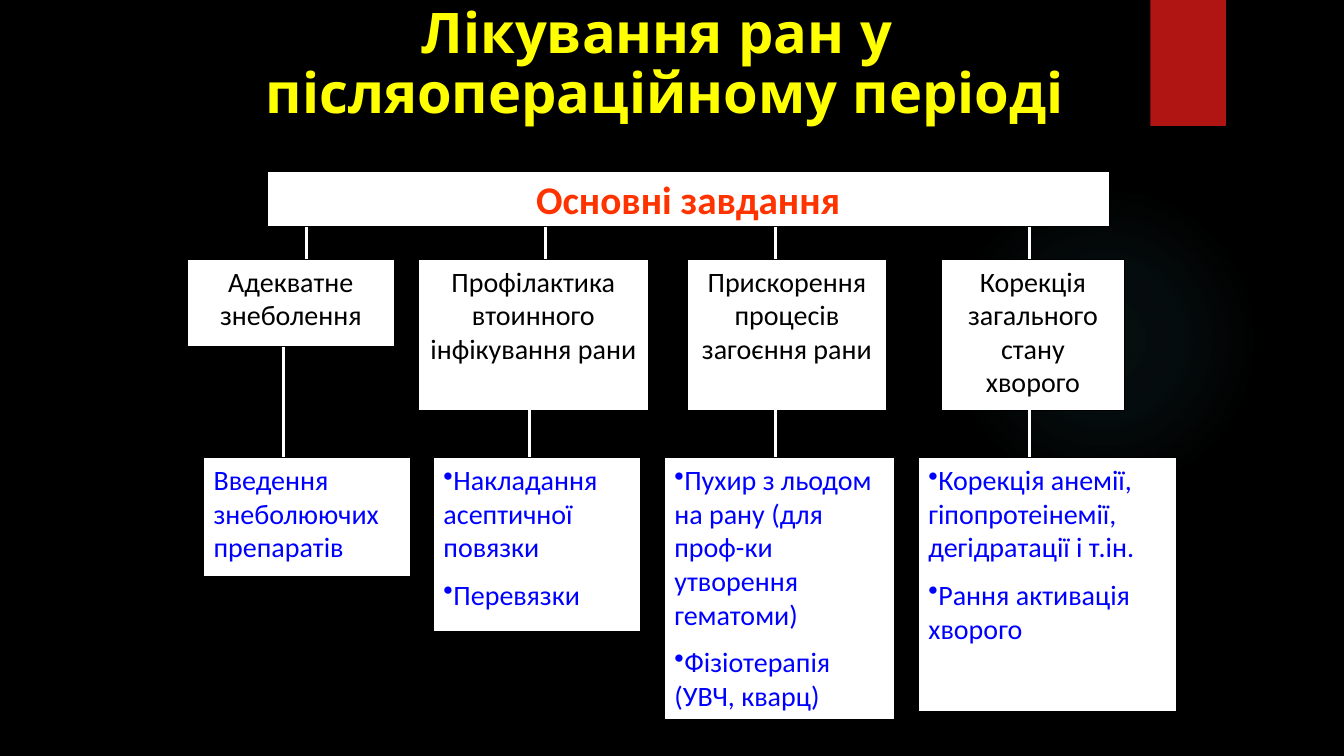
from lxml.etree import SubElement
from pptx import Presentation
from pptx.dml.color import RGBColor
from pptx.enum.shapes import MSO_CONNECTOR as Connector, MSO_SHAPE as Preset
from pptx.enum.text import MSO_ANCHOR as Anchor, MSO_AUTO_SIZE as AutoSize, PP_ALIGN as Align
from pptx.oxml import parse_xml
from pptx.oxml.ns import nsdecls, qn
from pptx.util import Inches, Pt

WHITE, BLACK, BLUE = "FFFFFF", "000000", "0000FF"
HEADER_BOTTOM, TASK_TOP, MEASURE_TOP = 2.25, 2.57, 4.54

BRANCHES = [
    {"task": "Адекватне знеболення", "task_box": (1.86, 2.05, 0.87),
     "measures": ["Введення знеболюючих препаратів"], "measure_box": (2.02, 2.05, 1.18),
     "links": (3.04, 2.81)},
    {"task": "Профілактика втоинного інфікування рани", "task_box": (4.15, 2.28, 1.5),
     "measures": ["Накладання асептичної повязки", "Перевязки"],
     "measure_box": (4.3, 2.05, 1.73), "links": (5.41, 5.25)},
    {"task": "Прискорення процесів загоєння рани", "task_box": (6.82, 1.97, 1.5),
     "measures": ["Пухир з льодом на рану (для проф-ки утворення гематоми)",
                  "Фізіотерапія (УВЧ, кварц)"],
     "measure_box": (6.59, 2.28, 2.6), "links": (7.69, 7.69)},
    {"task": "Корекція загального стану хворого", "task_box": (9.34, 1.81, 1.5),
     "measures": ["Корекція анемії, гіпопротеінемії, дегідратації і т.ін.",
                  "Рання активація хворого"],
     "measure_box": (9.11, 2.56, 2.52), "links": (10.21, 10.21)},
]


def color(value):
    return RGBColor.from_string(value)


def add_preset(slide, preset, left, top, width, height, fill):
    shape = slide.shapes.add_shape(
        preset, Inches(left), Inches(top), Inches(width), Inches(height))
    shape.shadow.inherit = False
    shape.fill.solid()
    shape.fill.fore_color.rgb = color(fill)
    shape.line.fill.background()
    return shape


def add_glow(slide):
    shape = add_preset(slide, Preset.OVAL, 9.41, 1.83, 3.08, 3.08, "50B9C1")
    stops = "".join(
        f'<a:gs pos="{position * 1000}"><a:srgbClr val="50B9C1">'
        f'<a:alpha val="{alpha * 1000}"/></a:srgbClr></a:gs>'
        for position, alpha in [(0, 7), (36, 6), (69, 0)])
    gradient = parse_xml(
        f'<a:gradFill {nsdecls("a")}><a:gsLst>{stops}</a:gsLst><a:path path="circle">'
        '<a:fillToRect l="50000" t="50000" r="50000" b="50000"/></a:path></a:gradFill>')
    properties = shape._element.spPr
    properties.replace(properties.find(qn("a:solidFill")), gradient)


def fill_text(frame, lines, align, font_name, size, text_color, bold=False, bulleted=False):
    for index, line in enumerate(lines):
        paragraph = frame.paragraphs[0] if index == 0 else frame.add_paragraph()
        paragraph.alignment = align
        if bulleted:
            SubElement(paragraph._p.get_or_add_pPr(), qn("a:buChar"), char="•")
        run = paragraph.add_run()
        run.text = line
        run.font.name = font_name
        run.font.size = Pt(size)
        run.font.bold = bold
        run.font.color.rgb = color(text_color)


def add_box(slide, left, top, width, height, lines, align=Align.CENTER, size=20,
            text_color=BLACK, bold=False, anchor=Anchor.TOP):
    shape = add_preset(slide, Preset.RECTANGLE, left, top, width, height, WHITE)
    shape.line.color.rgb = color(BLACK)
    shape.line.width = Pt(0.75)
    frame = shape.text_frame
    frame.word_wrap = True
    frame.vertical_anchor = anchor
    fill_text(frame, lines, align, "Calibri", size, text_color, bold, len(lines) > 1)
    for paragraph in frame.paragraphs:
        paragraph.space_after = Pt(10)


def add_link(slide, x, top, bottom):
    link = slide.shapes.add_connector(
        Connector.STRAIGHT, Inches(x), Inches(top), Inches(x), Inches(bottom))
    link.line.color.rgb = color(WHITE)
    link.line.width = Pt(2)
    SubElement(link._element.spPr, qn("a:effectLst"))


def add_title(slide, lines):
    box = slide.shapes.add_textbox(Inches(1.52), Inches(0), Inches(10.15), Inches(1.43))
    frame = box.text_frame
    frame.word_wrap = True
    frame.auto_size = AutoSize.SHAPE_TO_FIT_TEXT
    fill_text(frame, lines, Align.CENTER, "Quicksand", 40, "FFFF00", bold=True)
    for paragraph in frame.paragraphs:
        paragraph.line_spacing = 0.9


def add_branch(slide, branch):
    left, width, height = branch["task_box"]
    add_box(slide, left, TASK_TOP, width, height, [branch["task"]])
    upper_x, lower_x = branch["links"]
    add_link(slide, upper_x, HEADER_BOTTOM, TASK_TOP)
    add_link(slide, lower_x, TASK_TOP + height, MEASURE_TOP)
    left, width, height = branch["measure_box"]
    add_box(slide, left, MEASURE_TOP, width, height, branch["measures"], Align.LEFT,
            text_color=BLUE)


def main():
    presentation = Presentation()
    presentation.slide_width = Inches(13.33)
    presentation.slide_height = Inches(7.5)
    slide = presentation.slides.add_slide(presentation.slide_layouts[6])
    slide.background.fill.solid()
    slide.background.fill.fore_color.rgb = color(BLACK)
    add_glow(slide)
    add_preset(slide, Preset.RECTANGLE, 11.41, 0, 0.75, 1.25, "B01513")
    add_title(slide, ["Лікування ран у ", "післяопераційному періоді"])
    add_box(slide, 2.65, 1.7, 8.35, HEADER_BOTTOM - 1.7, ["Основні завдання"], size=28,
            text_color="FF3300", bold=True, anchor=Anchor.MIDDLE)
    for branch in BRANCHES:
        add_branch(slide, branch)
    presentation.save("out.pptx")


if __name__ == "__main__":
    main()
